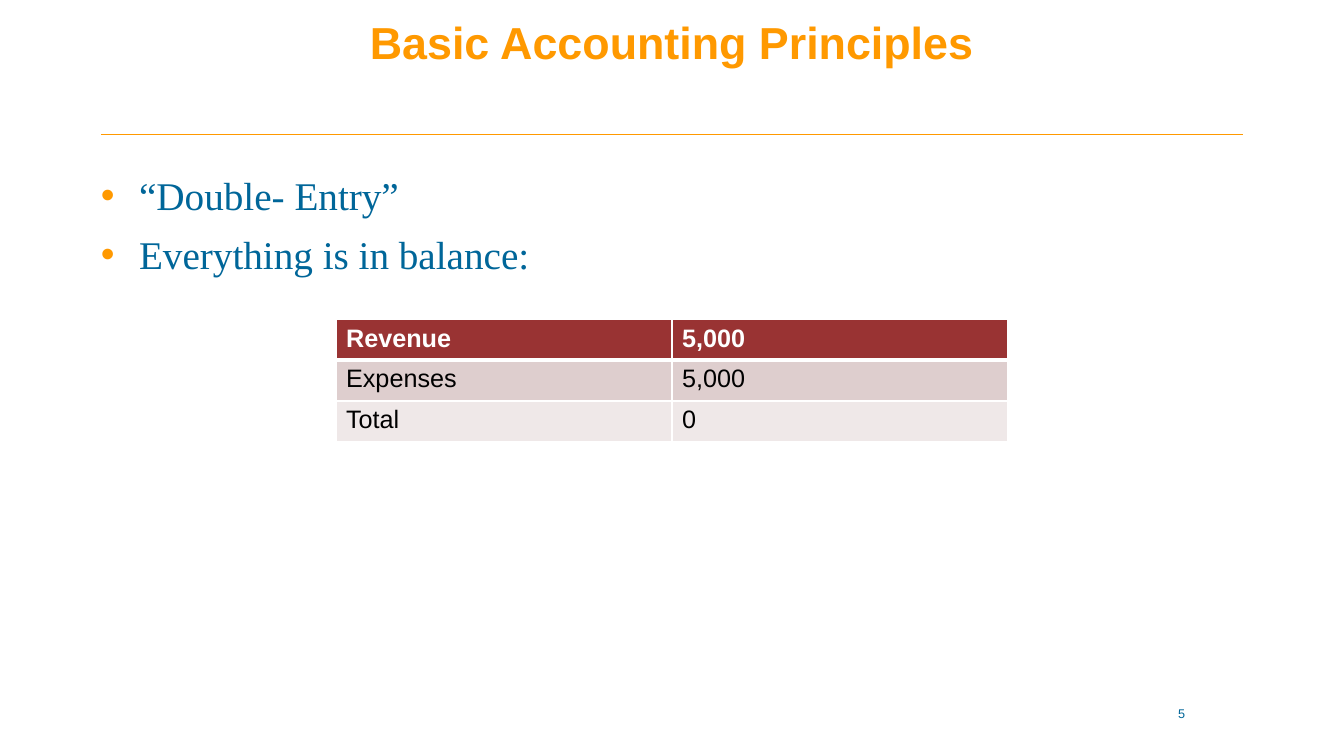
from dataclasses import dataclass

from lxml import etree
from pptx import Presentation
from pptx.dml.color import RGBColor
from pptx.enum.shapes import MSO_CONNECTOR
from pptx.enum.text import MSO_ANCHOR, MSO_AUTO_SIZE, PP_ALIGN
from pptx.oxml.ns import qn
from pptx.util import Inches, Pt

LINE = MSO_CONNECTOR.STRAIGHT
TOP, BOTTOM = MSO_ANCHOR.TOP, MSO_ANCHOR.BOTTOM
FIXED = MSO_AUTO_SIZE.NONE
LEFT, CENTER = PP_ALIGN.LEFT, PP_ALIGN.CENTER


@dataclass(frozen=True)
class Theme:
    gold: str = "FF9900"
    blue: str = "006699"
    white: str = "FFFFFF"
    black: str = "000000"
    head: str = "993333"
    bands: tuple = ("DECECE", "EFE8E8")
    sans: str = "Arial"
    serif: str = "Times New Roman"
    title: int = 32
    body: int = 28
    cell: int = 18
    small: int = 9


def add_color(node, value):
    fill = etree.SubElement(node, qn("a:solidFill"))
    etree.SubElement(fill, qn("a:srgbClr"), val=value)


def write(para, text, *, font, size, color, bold=False, align=LEFT, pitch=None, before=0):
    para.alignment = align
    para.space_before = Pt(before)
    if pitch:
        para.line_spacing = Pt(pitch)
    run = para.add_run()
    run.text = text
    run.font.name = font
    run.font.size = Pt(size)
    run.font.bold = bold
    run.font.color.rgb = RGBColor.from_string(color)


def add_bullet(para, color, indent):
    props = para._p.get_or_add_pPr()
    props.set("marL", str(indent))
    props.set("indent", str(-indent))
    tint = etree.SubElement(props, qn("a:buClr"))
    etree.SubElement(tint, qn("a:srgbClr"), val=color)
    etree.SubElement(props, qn("a:buFont"), typeface="Arial")
    etree.SubElement(props, qn("a:buChar"), char="•")


def add_border(cell, color, base):
    props = cell._tc.get_or_add_tcPr()
    for side, width in (("L", 1), ("R", 1), ("T", 1), ("B", base)):
        edge = etree.SubElement(props, qn(f"a:ln{side}"), w=str(Pt(width)))
        add_color(edge, color)


class Page:
    """Draws themed elements on one slide, placed on a 40 by 90 grid."""

    def __init__(self, deck, theme):
        self.theme = theme
        self.slide = deck.slides.add_slide(deck.slide_layouts[1])
        self.col = deck.slide_width / 40
        self.row = deck.slide_height / 90

    def area(self, left, top, width, height):
        return (round(left * self.col), round(top * self.row),
                round(width * self.col), round(height * self.row))

    def holder(self, shape, area, anchor, base=0):
        shape.left, shape.top, shape.width, shape.height = self.area(*area)
        frame = shape.text_frame
        frame.auto_size = FIXED
        frame.word_wrap = True
        frame.vertical_anchor = anchor
        frame.margin_left = frame.margin_right = frame.margin_top = 0
        frame.margin_bottom = Inches(base)
        return frame

    def title(self, text, area):
        look = self.theme
        frame = self.holder(self.slide.shapes.title, area, BOTTOM, 0.65)
        write(frame.paragraphs[0], text, font=look.sans, size=look.title,
              color=look.gold, bold=True, align=CENTER, pitch=36)

    def bullets(self, items, area):
        look = self.theme
        frame = self.holder(self.slide.placeholders[1], area, TOP)
        for index, text in enumerate(items):
            para = frame.add_paragraph() if index else frame.paragraphs[0]
            add_bullet(para, look.gold, Inches(0.38))
            write(para, text, font=look.serif, size=look.body, color=look.blue,
                  pitch=30, before=12 if index else 0)

    def rule(self, left, right, row):
        start, level, width, _ = self.area(left, row, right - left, 0)
        line = self.slide.shapes.add_connector(LINE, start, level, start + width, level)
        line.line.color.rgb = RGBColor.from_string(self.theme.gold)
        line.line.width = Pt(1)
        etree.SubElement(line._element.spPr, qn("a:effectLst"))

    def label(self, text, area):
        look = self.theme
        frame = self.slide.shapes.add_textbox(*self.area(*area)).text_frame
        frame.word_wrap = True
        write(frame.paragraphs[0], text, font=look.sans, size=look.small,
              color=look.blue, align=CENTER)

    def table(self, data, area):
        look = self.theme
        grid = self.slide.shapes.add_table(len(data), len(data[0]), *self.area(*area)).table
        for r, values in enumerate(data):
            head = r == 0
            fill = look.head if head else look.bands[(r - 1) % 2]
            for c, text in enumerate(values):
                cell = grid.cell(r, c)
                add_border(cell, look.white, 3 if head else 1)
                cell.fill.solid()
                cell.fill.fore_color.rgb = RGBColor.from_string(fill)
                write(cell.text_frame.paragraphs[0], text, font=look.sans, size=look.cell,
                      color=look.white if head else look.black, bold=head)


def main():
    deck = Presentation()
    deck.slide_width, deck.slide_height = Inches(13.33), Inches(7.5)
    page = Page(deck, Theme())
    page.rule(3, 37, 16)
    page.title("Basic Accounting Principles", (3, 0, 34, 16))
    page.bullets(["“Double- Entry”", "Everything is in balance:"], (3, 21, 34, 55))
    page.label("5", (31, 83.5, 8.33, 4.8))
    page.table([("Revenue", "5,000"), ("Expenses", "5,000"), ("Total", "0")],
               (10, 38, 20, 14.6))
    deck.save("out.pptx")


if __name__ == "__main__":
    main()
